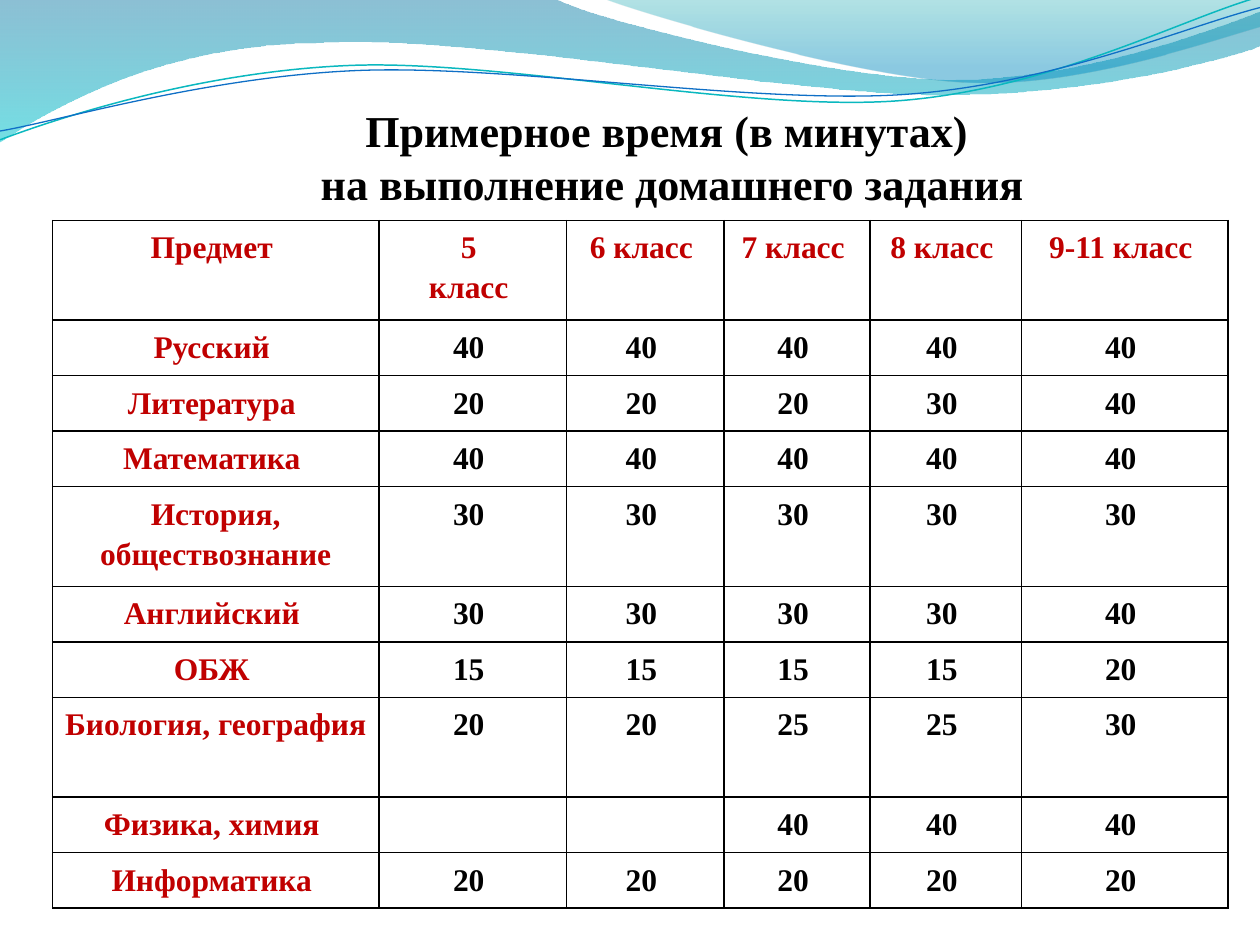
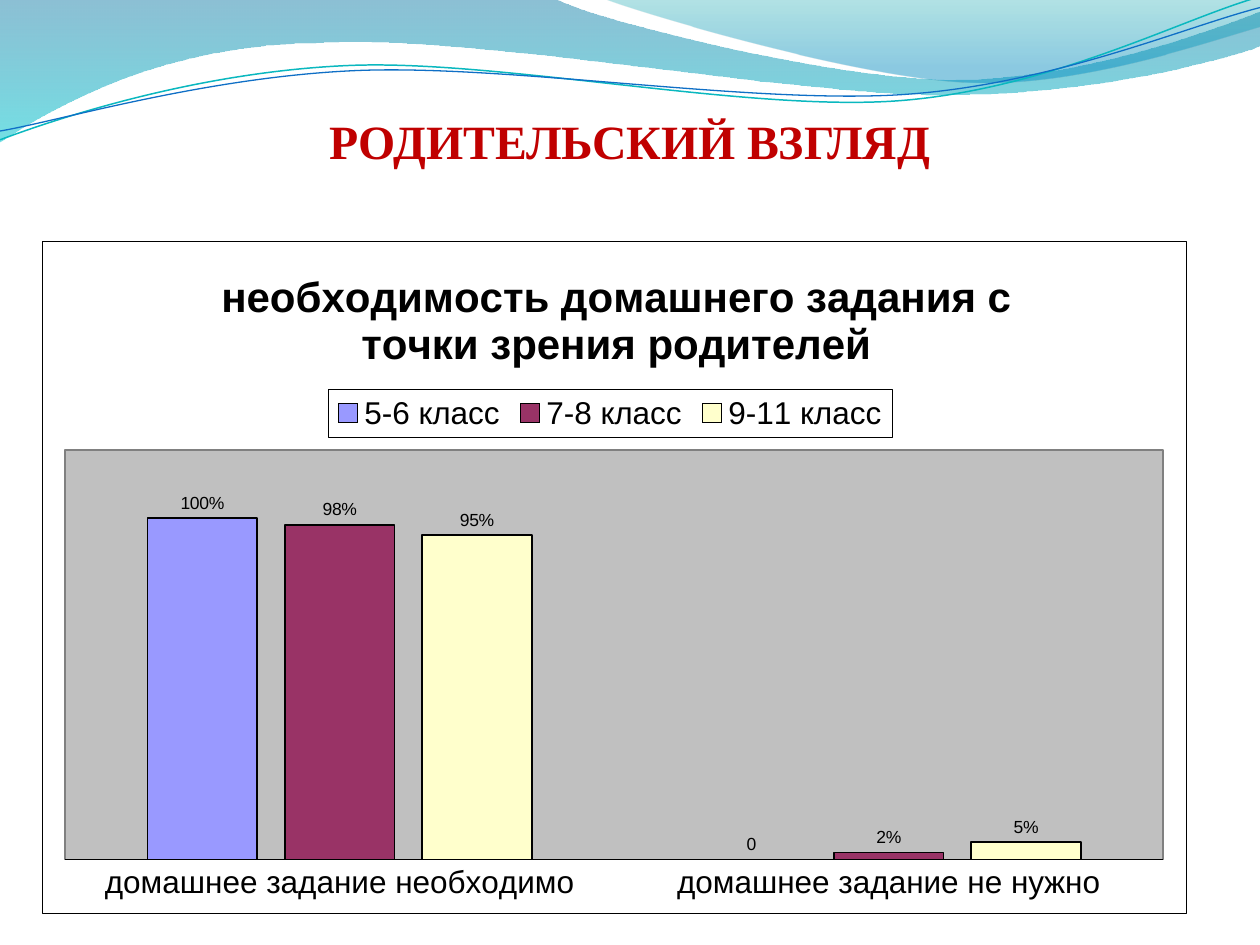
from math import cos, radians, sin
from lxml.etree import SubElement
from pptx import Presentation
from pptx.chart.data import CategoryChartData
from pptx.dml.color import RGBColor
from pptx.enum.chart import XL_CHART_TYPE, XL_LABEL_POSITION, XL_LEGEND_POSITION, XL_TICK_MARK
from pptx.enum.text import MSO_ANCHOR, PP_ALIGN
from pptx.oxml import parse_xml
from pptx.oxml.ns import nsdecls, qn
from pptx.util import Inches, Pt

UNIT = Inches(0.1)
COLS, ROWS = 100, 75
SERIF, SANS = "Times New Roman", "Arial"

BLACK = RGBColor(0x00, 0x00, 0x00)
WHITE = RGBColor(0xFF, 0xFF, 0xFF)
RED = RGBColor(0xC0, 0x00, 0x00)
SILVER = RGBColor(0xC0, 0xC0, 0xC0)
GRAY = RGBColor(0x80, 0x80, 0x80)
LILAC = RGBColor(0x99, 0x99, 0xFF)
PLUM = RGBColor(0x99, 0x33, 0x66)
CREAM = RGBColor(0xFF, 0xFF, 0xCC)
DEEP_BLUE = RGBColor(0x00, 0x74, 0xA1)
TURQUOISE = RGBColor(0x00, 0xC6, 0xCF)
TEAL = RGBColor(0x00, 0xA1, 0xA9)
SKY = RGBColor(0x00, 0x8B, 0xBF)
TEAL_LINE = RGBColor(0x0A, 0xB8, 0xBF)
BLUE_LINE = RGBColor(0x0F, 0x6F, 0xC6)

BANDS = [
    ([(0, -0.1), (44, -0.1),
      (47.6, 1.7, 66.4, 6.3, 75.8, 6.3), (85.3, 6.3, 95.8, 2.6, 100, 0.9),
      (100.1, 3.6),
      (98.3, 4.4, 87, 7.6, 74.6, 7.5), (62.2, 7.5, 38.2, 2.8, 25.7, 3.4),
      (12.9, 3.5, 4.6, 8.3, -0.1, 11.3)],
     [(0, DEEP_BLUE, 45), (1, TURQUOISE, 55)]),
    ([(47.9, -0.1), (50.9, 1.1, 68.2, 6.2, 76.9, 6.5),
      (85.6, 6.9, 96.1, 3.2, 100, 2.1), (100, 0)],
     [(0, TEAL, 30), (0.8, SKY, 45)]),
]
TILT = 2.7
STRANDS = [
    ([(0, 11.1), (4.8, 9.3, 15.8, 5.7, 27.7, 5.2),
      (39.5, 4.7, 59.3, 8.9, 71.3, 8), (83.3, 7.1, 93.8, 1.5, 99.8, -0.2)],
     (49.9, 5.75), TEAL_LINE, 0.85),
    ([(0, 10.4), (4.7, 9.6, 16.4, 6.1, 28.3, 5.6),
      (40.3, 5.1, 59.7, 8.3, 71.7, 7.5), (83.6, 6.7, 94.1, 2.1, 100, 0.6)],
     (49.95, 5.9), BLUE_LINE, 0.75),
]

COL_SHARES = [2.59, 1.49, 1.25, 1.16, 1.2, 1.64]
ROW_SHARES = [0.79, 0.44, 0.44, 0.44, 0.79, 0.44, 0.44, 0.79, 0.44, 0.44]
HOMEWORK = [
    ["Предмет ", "5 \nкласс ", "6 класс ", "7 класс ", "8 класс ", "9-11 класс "],
    ["Русский ", 40, 40, 40, 40, 40],
    ["Литература ", 20, 20, 20, 30, 40],
    ["Математика ", 40, 40, 40, 40, 40],
    ["История, обществознание", 30, 30, 30, 30, 30],
    ["Английский ", 30, 30, 30, 30, 40],
    ["ОБЖ ", 15, 15, 15, 15, 20],
    ["Биология, география ", 20, 20, 25, 25, 30],
    ["Физика, химия ", None, None, 40, 40, 40],
    ["Информатика ", 20, 20, 20, 20, 20],
]
OPINIONS = [
    ("5-6 класс", (100, 0), LILAC),
    ("7-8 класс", (98, 2), PLUM),
    ("9-11 класс", (95, 5), CREAM),
]


def grid(*lengths):
    """Turn grid units into slide lengths."""
    return [round(v * UNIT) for v in lengths]


def put_text(tf, text, size=18, color=BLACK, font=SERIF, bold=True, spacing=None):
    """Write centred text: a newline starts a paragraph, a vertical tab breaks a line."""
    for i, paragraph in enumerate(text.split("\n")):
        p = tf.add_paragraph() if i else tf.paragraphs[0]
        p.alignment = PP_ALIGN.CENTER
        if spacing:
            p.line_spacing = spacing
        for j, line in enumerate(paragraph.split("\v")):
            if j:
                p.add_line_break()
            r = p.add_run()
            r.text = line
            r.font.size, r.font.bold, r.font.name = Pt(size), bold, font
            r.font.color.rgb = color


def pairs(node):
    """Split a node into its points."""
    return list(zip(node[::2], node[1::2]))


def turn(nodes, center, angle):
    """Rotate all nodes clockwise around the center."""
    (cx, cy), c, s = center, cos(radians(angle)), sin(radians(angle))
    return [[v for x, y in pairs(node)
             for v in (cx + (x - cx) * c - (y - cy) * s, cy + (x - cx) * s + (y - cy) * c)]
            for node in nodes]


def add_curve(slide, nodes, box, close):
    """Draw an outline of lines and cubic curves inside the box."""
    left, top, _, _ = box
    nodes = [[grid(left + x, top + y) for x, y in pairs(node)] for node in nodes]
    fb = slide.shapes.build_freeform(*nodes[0][-1])
    fb.add_line_segments([node[-1] for node in nodes[1:]], close=close)
    sp = fb.convert_to_shape()
    sp.shadow.inherit = False
    for segment, node in zip(list(sp._element.iter(qn("a:lnTo"))), nodes[1:]):
        if len(node) == 3:
            points = "".join(f'<a:pt x="{x - sp.left}" y="{y - sp.top}"/>' for x, y in node)
            curve = parse_xml(f'<a:cubicBezTo {nsdecls("a")}>{points}</a:cubicBezTo>')
            segment.getparent().replace(segment, curve)
    return sp


def add_waves(slide, box):
    """Draw the gradient bands and thin strands of the header."""
    for nodes, stops in BANDS:
        sp = add_curve(slide, nodes, box, True)
        sp.line.fill.background()
        sp.fill.gradient()
        sp.fill.gradient_angle = 270
        for stop, (position, color, _) in zip(sp.fill.gradient_stops, stops):
            stop.position = position
            stop.color.rgb = color
        for clr, (_, _, alpha) in zip(sp._element.spPr.iter(qn("a:srgbClr")), stops):
            SubElement(clr, qn("a:alpha")).set("val", str(alpha * 1000))
    for nodes, center, color, width in STRANDS:
        sp = add_curve(slide, turn(nodes, center, TILT), box, False)
        sp.rotation = -TILT
        sp.fill.background()
        sp.line.color.rgb = color
        sp.line.width = Pt(width)


def add_title(slide, text, box, foot, **fmt):
    """Place a slide title above the foot margin of the box."""
    tf = slide.shapes.add_textbox(*grid(*box)).text_frame
    tf.word_wrap = True
    tf.vertical_anchor = MSO_ANCHOR.BOTTOM
    tf.margin_left = tf.margin_right = 0
    tf.margin_bottom, = grid(foot)
    put_text(tf, text, **fmt)


def line_xml(tag, color, width):
    """Build a solid line element."""
    return parse_xml(f'<a:{tag} {nsdecls("a")} w="{Pt(width)}"><a:solidFill>'
                     f'<a:srgbClr val="{color}"/></a:solidFill></a:{tag}>')


def add_homework_table(slide, box):
    """Fill the box with the table of minutes by subject and class."""
    tbl = slide.shapes.add_table(len(HOMEWORK), len(COL_SHARES), *grid(*box)).table
    tbl.first_row = tbl.horz_banding = False
    _, _, width, height = grid(*box)
    for col, share in zip(tbl.columns, COL_SHARES):
        col.width = round(width * share / sum(COL_SHARES))
    for row, share in zip(tbl.rows, ROW_SHARES):
        row.height = round(height * share / sum(ROW_SHARES))
    for i, values in enumerate(HOMEWORK):
        for j, value in enumerate(values):
            cell = tbl.cell(i, j)
            cell.fill.background()
            cell.margin_left = cell.margin_right = Inches(0.09)
            cell.margin_top = cell.margin_bottom = Inches(0.04)
            for k, side in enumerate(("lnL", "lnR", "lnT", "lnB")):
                cell._tc.tcPr.insert(k, line_xml(side, BLACK, 1))
            if value is not None:
                text = value if isinstance(value, str) else f"{value} "
                color = BLACK if i and j else RED
                put_text(cell.text_frame, text, color=color, spacing=1.15)


def frame_xml(fill, color, width):
    """Build the fill and border of a chart part."""
    sp_pr = parse_xml(f'<c:spPr {nsdecls("c", "a")}><a:solidFill>'
                      f'<a:srgbClr val="{fill}"/></a:solidFill></c:spPr>')
    sp_pr.append(line_xml("ln", color, width))
    return sp_pr


def set_layout(part, index, inner=False, **shares):
    """Fix the place of a chart part as shares of the chart."""
    for old in part.findall(qn("c:layout")):
        part.remove(old)
    layout = parse_xml(f'<c:layout {nsdecls("c")}><c:manualLayout/></c:layout>')
    settings = {"layoutTarget": "inner"} if inner else {}
    settings.update(xMode="edge", yMode="edge", **shares)
    for name, value in settings.items():
        SubElement(layout[0], qn(f"c:{name}")).set("val", str(value))
    part.insert(index, layout)


def add_opinion_chart(slide, box):
    """Fill the box with the column chart of parents' opinions."""
    data = CategoryChartData(number_format='0"%";;0')
    data.categories = ["домашнее задание необходимо", "домашнее задание не нужно"]
    for name, values, _ in OPINIONS:
        data.add_series(name, values)
    chart = slide.shapes.add_chart(XL_CHART_TYPE.COLUMN_CLUSTERED, *grid(*box), data).chart
    chart.font.size, chart.font.name = Pt(10), SANS
    chart.font.color.rgb = BLACK

    chart.has_title = True
    put_text(chart.chart_title.text_frame,
             "необходимость домашнего задания с точки зрения родителей", size=24, font=SANS)
    chart.has_legend = True
    chart.legend.position = XL_LEGEND_POSITION.TOP
    chart.legend.include_in_layout = False

    cat, val = chart.category_axis, chart.value_axis
    cat.major_tick_mark = XL_TICK_MARK.NONE
    cat.format.line.color.rgb = BLACK
    cat.format.line.width = Pt(0.25)
    val.visible = val.has_major_gridlines = False
    val.minimum_scale, val.maximum_scale = 0, 120

    plot = chart.plots[0]
    plot.vary_by_categories = False
    plot.overlap, plot.gap_width = -25, 150
    plot.has_data_labels = True
    labels = plot.data_labels
    labels.show_value = True
    labels.position = XL_LABEL_POSITION.OUTSIDE_END
    labels.number_format, labels.number_format_is_linked = '0"%";;0', False
    for series, (_, _, color) in zip(plot.series, OPINIONS):
        series.format.fill.solid()
        series.format.fill.fore_color.rgb = color
        series.format.line.color.rgb = BLACK
        series.format.line.width = Pt(1)

    root = chart._chartSpace.find(qn("c:chart"))
    area, legend = root.find(qn("c:plotArea")), root.find(qn("c:legend"))
    set_layout(root.find(qn("c:title")), 1, x=0.15, y=0.03)
    set_layout(legend, 1, x=0.25, y=0.22)
    set_layout(area, 0, inner=True, x=0.02, y=0.31, w=0.96, h=0.61)
    root.addnext(frame_xml(WHITE, BLACK, 0.25))
    area.append(frame_xml(SILVER, GRAY, 1))
    legend.find(qn("c:overlay")).addnext(frame_xml(WHITE, BLACK, 0.25))
    for font in (chart.legend.font, cat.tick_labels.font):
        font.size, font.name = Pt(18), SANS
        font.color.rgb = BLACK


def add_slide(prs):
    """Add a blank slide with the wave header."""
    slide = prs.slides.add_slide(prs.slide_layouts[6])
    add_waves(slide, (0, 0, COLS, 12))
    return slide


def main():
    """Build both slides and save them."""
    prs = Presentation()
    prs.slide_width, prs.slide_height = grid(COLS, ROWS)

    slide = add_slide(prs)
    add_title(slide, "Примерное время (в минутах) \vна выполнение домашнего задания",
              (6.7, 7.7, 93.3, 17.3), foot=8.4, size=25.2)
    add_homework_table(slide, (4.17, 17.5, 93.3, 54.6))

    slide = add_slide(prs)
    add_opinion_chart(slide, (3.33, 19.15, 90.83, 53.35))
    add_title(slide, "РОДИТЕЛЬСКИЙ ВЗГЛЯД", (3.33, 8.3, 93.33, 14.2), foot=9.1,
              size=27.3, color=RED)

    prs.save("out.pptx")


if __name__ == "__main__":
    main()
